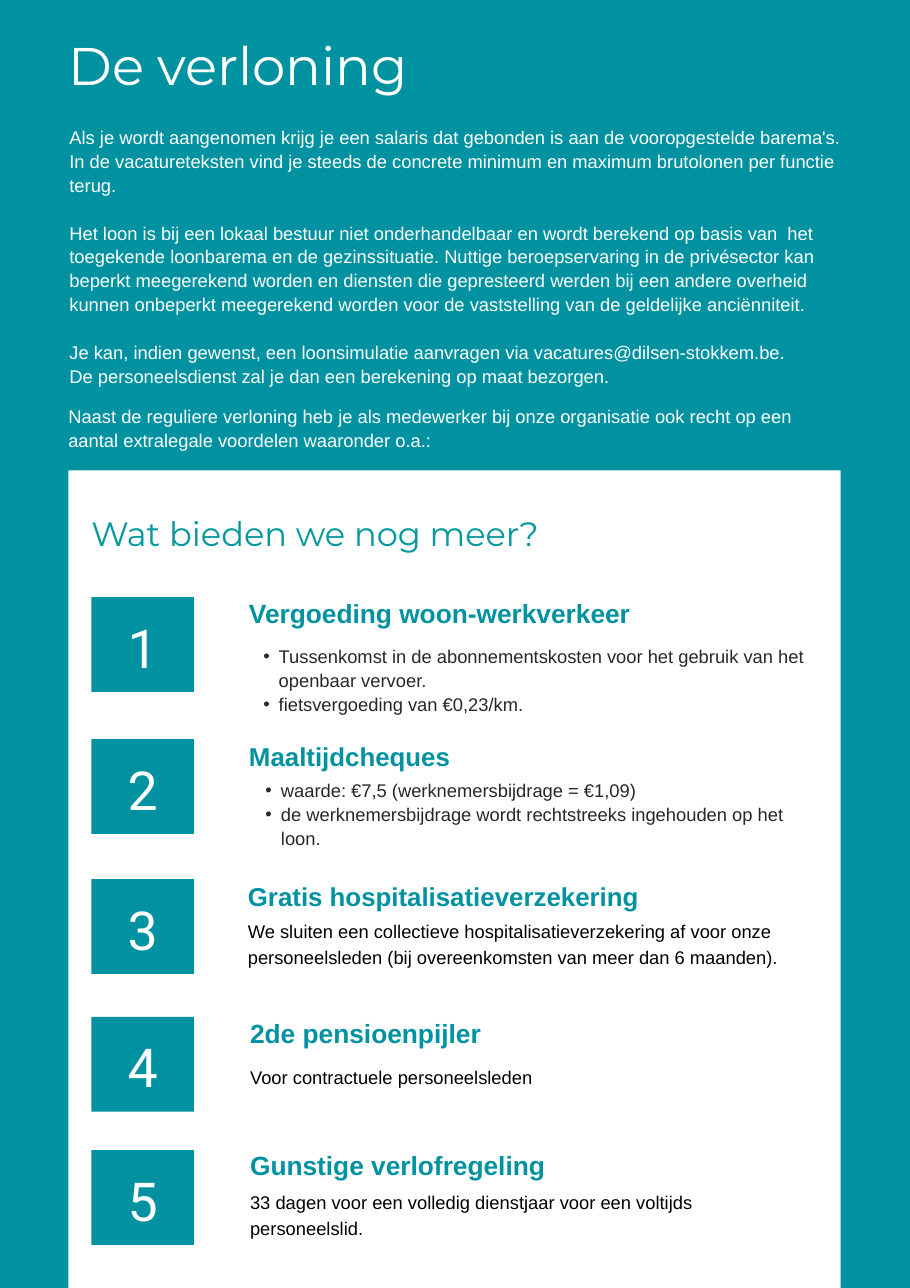
from dataclasses import dataclass

from lxml import etree
from pptx import Presentation
from pptx import util as u
from pptx.dml.color import RGBColor
from pptx.enum import shapes, text
from pptx.oxml import ns


@dataclass(frozen=True)
class TextStyle:
    font: str
    size: float
    line: float
    color: str
    bold: bool = False


@dataclass(frozen=True)
class Theme:
    teal: str = "0092A1"
    white: str = "FFFFFF"
    title: TextStyle = TextStyle("Montserrat", 34.6, 45, "FFFFFF")
    subtitle: TextStyle = TextStyle("Montserrat", 22, 30.8, "03989E")
    intro: TextStyle = TextStyle("Arial", 12, 15.6, "FFFFFF")
    number: TextStyle = TextStyle("Roboto", 35.1, 49.1, "FFFFFF")
    heading: TextStyle = TextStyle("Arial", 17.2, 22.4, "0092A1", True)
    long_heading: TextStyle = TextStyle("Arial", 16.9, 23.6, "0092A1", True)
    bullet: TextStyle = TextStyle("Arial", 12, 15.6, "272727")
    body: TextStyle = TextStyle("Arial", 12, 16.8, "000000")


@dataclass(frozen=True)
class Benefit:
    badge_top: float
    heading: str
    heading_at: tuple
    heading_style: TextStyle
    body: tuple
    body_at: tuple
    bulleted: bool = False


THEME = Theme()

INTRO = (
    "Als je wordt aangenomen krijg je een salaris dat gebonden is aan de vooropgestelde barema's. "
    "In de vacatureteksten vind je steeds de concrete minimum en maximum brutolonen per functie terug.",
    "Het loon is bij een lokaal bestuur niet onderhandelbaar en wordt berekend op basis van  het "
    "toegekende loonbarema en de gezinssituatie. Nuttige beroepservaring in de privésector kan "
    "beperkt meegerekend worden en diensten die gepresteerd werden bij een andere overheid kunnen "
    "onbeperkt meegerekend worden voor de vaststelling van de geldelijke anciënniteit.",
    "Je kan, indien gewenst, een loonsimulatie aanvragen via vacatures@dilsen-stokkem.be.",
    "De personeelsdienst zal je dan een berekening op maat bezorgen.",
)
EXTRAS = (
    "Naast de reguliere verloning heb je als medewerker bij onze organisatie ook recht op een "
    "aantal extralegale voordelen waaronder o.a.:",
)
BENEFITS = (
    Benefit(5.42, "Vergoeding woon-werkverkeer", (2.26, 5.4, 3.75, 0.29), THEME.heading,
            ("Tussenkomst in de abonnementskosten voor het gebruik van het openbaar vervoer.",
             "fietsvergoeding van €0,23/km."),
            (2.25, 5.84, 5.18, 0.66), bulleted=True),
    Benefit(6.71, "Maaltijdcheques", (2.26, 6.68, 3.75, 0.31), THEME.long_heading,
            ("waarde: €7,5 (werknemersbijdrage = €1,09)",
             "de werknemersbijdrage wordt rechtstreeks ingehouden op het loon."),
            (2.27, 7.06, 5.18, 0.66), bulleted=True),
    Benefit(7.98, "Gratis hospitalisatieverzekering", (2.25, 7.95, 3.75, 0.31), THEME.long_heading,
            ("We sluiten een collectieve hospitalisatieverzekering af voor onze personeelsleden "
             "(bij overeenkomsten van meer dan 6 maanden).",),
            (2.25, 8.32, 5, 0.46)),
    Benefit(9.23, "2de pensioenpijler", (2.27, 9.21, 3.75, 0.29), THEME.heading,
            ("Voor contractuele personeelsleden",), (2.27, 9.64, 5, 0.22)),
    Benefit(10.44, "Gunstige verlofregeling", (2.27, 10.41, 3.75, 0.29), THEME.heading,
            ("33 dagen voor een volledig dienstjaar voor een voltijds personeelslid.",),
            (2.27, 10.78, 5, 0.46)),
)


class SlideBuilder:
    def __init__(self, presentation, theme):
        self.theme = theme
        self.slide = presentation.slides.add_slide(presentation.slide_layouts[5])
        fill = self.slide.background.fill
        fill.solid()
        fill.fore_color.rgb = RGBColor.from_string(theme.teal)

    def title(self, wording, at):
        shape = self.slide.shapes.title
        shape.left, shape.top, shape.width, shape.height = map(u.Inches, at)
        self.fill_text(shape.text_frame, (wording,), self.theme.title)

    def rectangle(self, at, color):
        shape = self.slide.shapes.add_shape(shapes.MSO_SHAPE.RECTANGLE, *map(u.Inches, at))
        shape.shadow.inherit = False
        shape.fill.solid()
        shape.fill.fore_color.rgb = RGBColor.from_string(color)
        shape.line.fill.background()
        return shape

    def badge(self, number, top):
        shape = self.rectangle((0.83, top, 0.93, 0.86), self.theme.teal)
        self.fill_text(shape.text_frame, (str(number),), self.theme.number,
                       align=text.PP_ALIGN.CENTER)
        shape.text_frame.margin_top = u.Inches(0.06)

    def text_box(self, paragraphs, at, style, **options):
        box = self.slide.shapes.add_textbox(*map(u.Inches, at))
        self.fill_text(box.text_frame, paragraphs, style, **options)

    def benefit(self, number, item):
        self.badge(number, item.badge_top)
        self.text_box((item.heading,), item.heading_at, item.heading_style)
        style = self.theme.bullet if item.bulleted else self.theme.body
        self.text_box(item.body, item.body_at, style, bulleted=item.bulleted)

    def fill_text(self, frame, paragraphs, style, align=text.PP_ALIGN.LEFT, bulleted=False, gaps=()):
        """Fill a frame; gaps holds the indexes of paragraphs with one line of space before."""
        frame.margin_left = frame.margin_top = frame.margin_right = frame.margin_bottom = 0
        frame.word_wrap = True
        frame.auto_size = text.MSO_AUTO_SIZE.NONE
        frame.vertical_anchor = text.MSO_ANCHOR.TOP
        for index, wording in enumerate(paragraphs):
            paragraph = frame.paragraphs[0] if index == 0 else frame.add_paragraph()
            if bulleted:
                self.add_bullet(paragraph)
            paragraph.alignment = align
            paragraph.line_spacing = u.Pt(style.line)
            paragraph.space_before = u.Pt(style.line if index in gaps else 0)
            run = paragraph.add_run()
            run.text = wording
            run.font.name = style.font
            run.font.size = u.Pt(style.size)
            run.font.bold = style.bold
            run.font.color.rgb = RGBColor.from_string(style.color)

    def add_bullet(self, paragraph):
        paragraph.level = 1
        properties = paragraph._p.get_or_add_pPr()
        properties.set("marL", str(u.Inches(0.28)))
        properties.set("indent", str(u.Inches(-0.14)))
        etree.SubElement(properties, ns.qn("a:buFont")).set("typeface", "Arial")
        etree.SubElement(properties, ns.qn("a:buChar")).set("char", "•")


def main():
    presentation = Presentation()
    presentation.slide_width = u.Inches(8.26)
    presentation.slide_height = u.Inches(11.69)

    builder = SlideBuilder(presentation, THEME)
    builder.title("De verloning", (0.62, 0.25, 6.15, 0.62))
    builder.text_box(INTRO, (0.63, 1.13, 7.01, 2.45), THEME.intro, gaps=(1, 2))
    builder.text_box(EXTRAS, (0.62, 3.66, 7.01, 0.43), THEME.intro)
    builder.rectangle((0.62, 4.27, 7.01, 7.42), THEME.white)
    builder.text_box(("Wat bieden we nog meer?",), (0.83, 4.59, 5.39, 0.41), THEME.subtitle)
    for number, item in enumerate(BENEFITS, start=1):
        builder.benefit(number, item)

    presentation.save("out.pptx")


if __name__ == "__main__":
    main()
